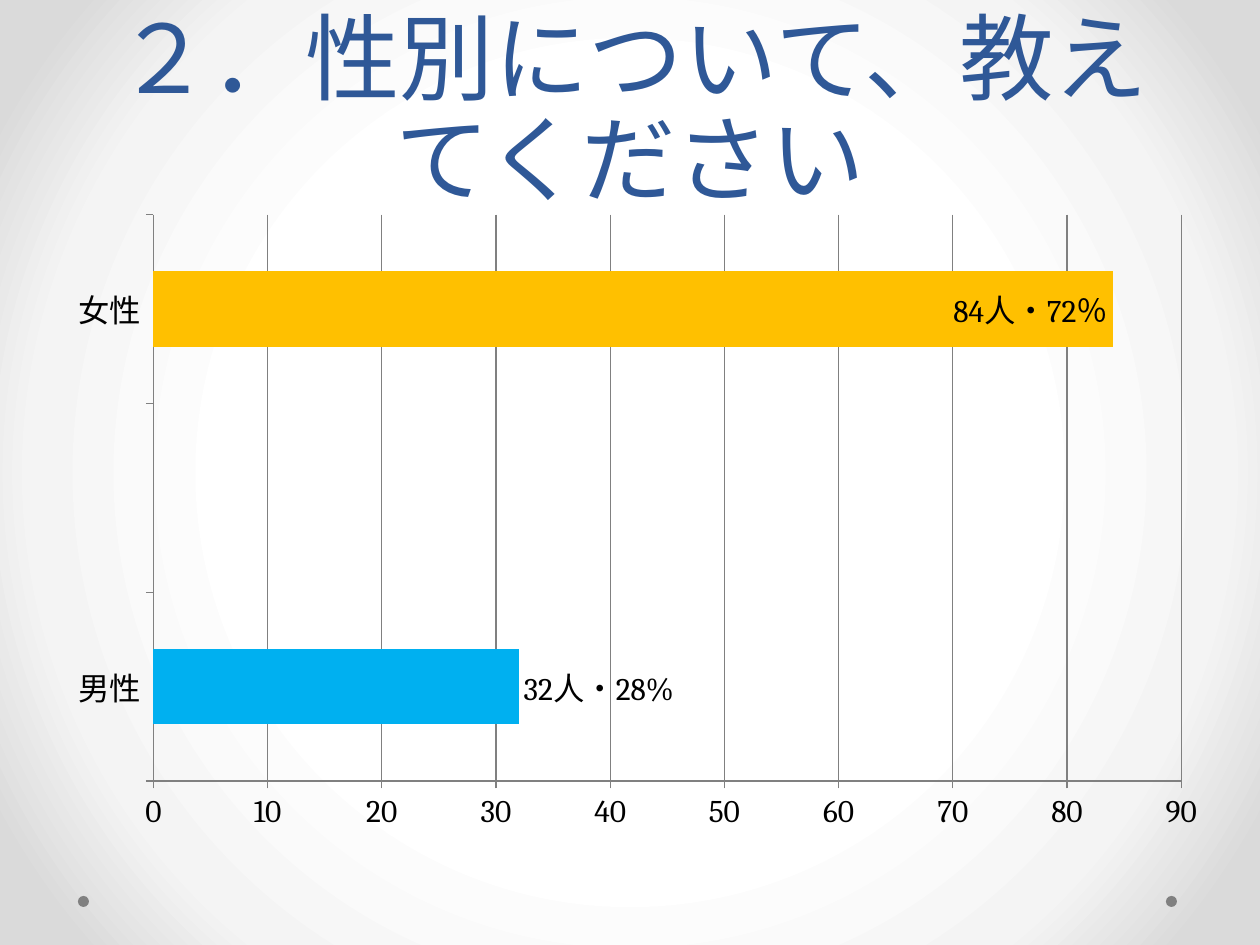
from lxml.etree import SubElement
from pptx import Presentation
from pptx.chart.data import CategoryChartData
from pptx.dml.color import RGBColor
from pptx.enum.chart import XL_CHART_TYPE, XL_LABEL_POSITION, XL_TICK_MARK
from pptx.enum.shapes import MSO_SHAPE
from pptx.enum.text import MSO_ANCHOR, MSO_AUTO_SIZE, PP_ALIGN
from pptx.oxml import parse_xml
from pptx.oxml.ns import nsdecls, qn
from pptx.util import Emu, Pt

SCALE = 914400 / 126
FONT = "Cambria"
COLORS = {"title": "2F5897", "text": "000000", "line": "808080",
          "male": "00B0F0", "female": "FFC000", "series": "9C5252"}
BACKDROP = {50: "FFFFFF", 76: "F4F4F4", 92: "DADADA"}


def px(length):
    return Emu(round(length * SCALE))


def style_font(font, size, color):
    for name, value in {"name": FONT, "size": Pt(size), "bold": False}.items():
        setattr(font, name, value)
    font.color.rgb = RGBColor.from_string(COLORS[color])


deck = Presentation()
deck.slide_width, deck.slide_height = px(1260), px(945)
page = deck.slides.add_slide(deck.slide_layouts[5])

# Background: radial gradient from the centre
page.background.fill.gradient()
gradient = page.background._cSld.find(".//" + qn("a:gradFill"))
for child in list(gradient):
    gradient.remove(child)
stops = SubElement(gradient, qn("a:gsLst"))
for position, color in BACKDROP.items():
    stop = SubElement(stops, qn("a:gs"), pos=str(position * 1000))
    SubElement(stop, qn("a:srgbClr"), val=color)
circle = SubElement(gradient, qn("a:path"), path="circle")
SubElement(circle, qn("a:fillToRect"), l="50000", t="50000", r="50000", b="50000")

# Corner dots
for left in (1166, 78):
    dot = page.shapes.add_shape(MSO_SHAPE.OVAL, px(left), px(896), px(11), px(11))
    dot.shadow.inherit = False
    dot.fill.solid()
    dot.fill.fore_color.rgb = RGBColor.from_string(COLORS["line"])
    dot.line.fill.background()

# Title
title = page.shapes.title
title.left, title.top, title.width, title.height = px(63), px(0), px(1134), px(220)
frame = title.text_frame
frame_format = {"word_wrap": True, "auto_size": MSO_AUTO_SIZE.NONE,
                "vertical_anchor": MSO_ANCHOR.BOTTOM}
for name, value in frame_format.items():
    setattr(frame, name, value)
para = frame.paragraphs[0]
para.alignment = PP_ALIGN.CENTER
para.line_spacing = Pt(58)
span = para.add_run()
span.text = "２．性別について、教えてください"
style_font(span.font, 54, "title")

# Bar chart
data = CategoryChartData()
data.categories = ["男性", "", "女性"]
data.add_series("Series 1", [32, None, 84])
chart = page.shapes.add_chart(XL_CHART_TYPE.BAR_CLUSTERED, px(63), px(214),
                              px(1134), px(630), data).chart
chart.has_legend = False
chart.has_title = False
style_font(chart.font, 18, "text")
plot = chart.plots[0]
plot.gap_width = 150
plot.vary_by_categories = False

# Axes and gridlines
value_axis = chart.value_axis
axis_format = {"minimum_scale": 0, "maximum_scale": 90, "major_unit": 10,
               "has_major_gridlines": True}
for name, value in axis_format.items():
    setattr(value_axis, name, value)
for axis in (chart.category_axis, value_axis):
    axis.major_tick_mark = XL_TICK_MARK.OUTSIDE
for part in (chart.category_axis, value_axis, value_axis.major_gridlines):
    part.format.line.color.rgb = RGBColor.from_string(COLORS["line"])
    part.format.line.width = Pt(0.75)

# Bar colours and labels
series = plot.series[0]
series.format.fill.solid()
series.format.fill.fore_color.rgb = RGBColor.from_string(COLORS["series"])
bars = [(0, "male", "32人・28%", XL_LABEL_POSITION.OUTSIDE_END),
        (2, "female", "84人・72％", XL_LABEL_POSITION.INSIDE_END)]
for index, color, text, position in bars:
    point = series.points[index]
    point.format.fill.solid()
    point.format.fill.fore_color.rgb = RGBColor.from_string(COLORS[color])
    label = point.data_label
    span = label.text_frame.paragraphs[0].add_run()
    span.text = text
    style_font(span.font, 18, "text")
    label.position = position

# Inner plot area as fractions of the chart
area = chart._chartSpace.find(".//" + qn("c:plotArea"))
for old in area.findall(qn("c:layout")):
    area.remove(old)
layout = parse_xml(f"<c:layout {nsdecls('c')}><c:manualLayout/></c:layout>")
area.insert(0, layout)
settings = {"layoutTarget": "inner", "xMode": "edge", "yMode": "edge",
            "x": 0.08, "y": 0, "w": 0.91, "h": 0.9}
for name, value in settings.items():
    SubElement(layout[0], qn("c:" + name), val=str(value))

deck.save("out.pptx")
